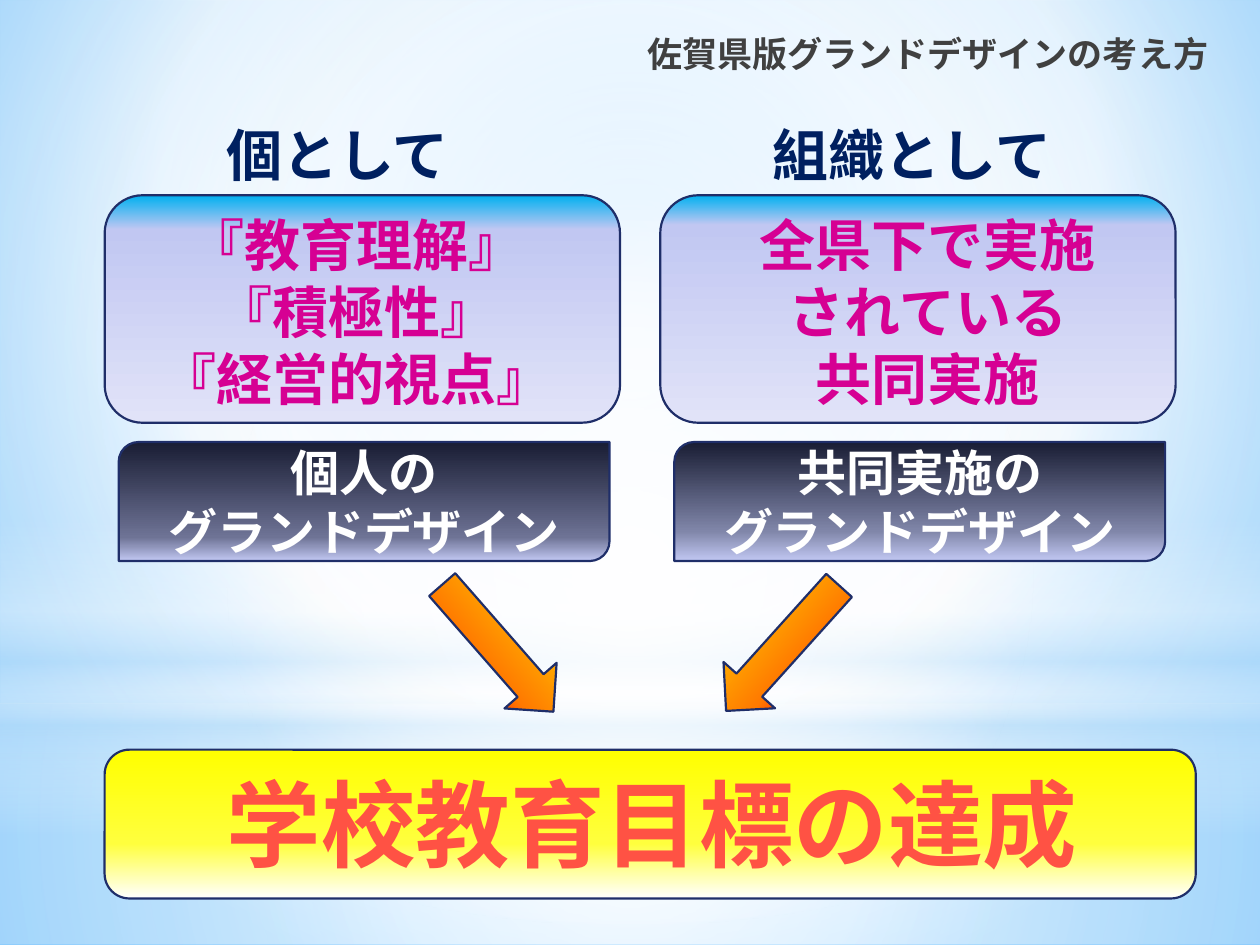
from lxml import etree
from pptx import Presentation
from pptx.dml.color import RGBColor
from pptx.enum.shapes import MSO_SHAPE
from pptx.enum.text import MSO_ANCHOR, PP_ALIGN
from pptx.oxml.ns import qn
from pptx.util import Pt

RECT, OVAL = MSO_SHAPE.RECTANGLE, MSO_SHAPE.OVAL
ROUND, DIAG = MSO_SHAPE.ROUNDED_RECTANGLE, MSO_SHAPE.ROUND_2_DIAG_RECTANGLE
ARROW = MSO_SHAPE.RIGHT_ARROW
TOP, MID = MSO_ANCHOR.TOP, MSO_ANCHOR.MIDDLE
CENTER, RIGHT = PP_ALIGN.CENTER, PP_ALIGN.RIGHT
SANS, KARLA = "Noto Sans CJK JP", "Karla"
HEX = {
    "white": "FFFFFF", "mist": "B4DCFA", "sky": "9ED5FF", "blue": "5BB9FF",
    "cyan": "00B0F0", "lilac": "C1C7F2", "pale": "E1E3F8", "edge": "1F2E69",
    "night": "191D34", "slate": "6E7395", "steel": "8086A9", "navy": "002060",
    "pink": "D60093", "gray": "404040", "coral": "FF5244", "yellow": "FFFF00",
    "lemon": "FFFF3D", "sun": "FFF200", "orange": "FF7A00", "red": "FF0300",
    "brown": "4D0808",
}


def grade(fill, root, stops, angle=90, focus=None):
    """Fill with a gradient of (place, colour, opacity) stops."""
    fill.solid()
    solid = root.find(".//" + qn("a:solidFill"))
    grad = etree.Element(qn("a:gradFill"), rotWithShape="1")
    marks = etree.SubElement(grad, qn("a:gsLst"))
    for place, name, *alpha in stops:
        mark = etree.SubElement(marks, qn("a:gs"), pos=str(place * 1000))
        tint = etree.SubElement(mark, qn("a:srgbClr"), val=HEX[name])
        if alpha:
            etree.SubElement(tint, qn("a:alpha"), val=str(alpha[0] * 1000))
    if focus:
        path = etree.SubElement(grad, qn("a:path"), path="circle")
        sides = {k: str(v * 1000) for k, v in zip("ltrb", focus)}
        etree.SubElement(path, qn("a:fillToRect"), **sides)
    else:
        etree.SubElement(grad, qn("a:lin"), ang=str(angle * 60000), scaled="0")
    solid.getparent().replace(solid, grad)


def block(slide, kind, box, stops, line=True, **look):
    """Add a gradient shape, outlined unless line is False."""
    shape = slide.shapes.add_shape(kind, *map(Pt, box))
    shape.shadow.inherit = False
    if line:
        shape.line.color.rgb = RGBColor.from_string(HEX["edge"])
        shape.line.width = Pt(1.25)
    else:
        shape.line.fill.background()
    props = shape.element.spPr
    rim = props.find(qn("a:ln"))
    props.remove(rim)
    grade(shape.fill, props, stops, **look)
    props.find(qn("a:gradFill")).addnext(rim)
    return shape


def write(shape, text, size=32, font=SANS, color="pink", align=CENTER,
          anchor=TOP, wrap=True):
    """Write one bold paragraph for each line of text."""
    frame = shape.text_frame
    frame.text = text
    frame.word_wrap = wrap
    frame.vertical_anchor = anchor
    for para in frame.paragraphs:
        para.alignment = align
        para.space_before = Pt(0)
        face = para.runs[0].font
        face.size, face.name, face.bold = Pt(size), font, True
        face.color.rgb = RGBColor.from_string(HEX[color])


def label(slide, box, text, **style):
    """Add a text box."""
    write(slide.shapes.add_textbox(*map(Pt, box)), text, **style)


def scene(slide, wide, high):
    """Paint the sky behind the content."""
    back = slide.background.fill
    back.solid()
    grade(back, slide.element, [(0, "sky"), (60, "white"), (100, "blue")],
          focus=(20, 10, 20, 60))
    split, mid = 402, (50, 50, 50, 50)
    block(slide, RECT, (0, split, wide, high - split),
          [(0, "white", 91), (37, "white", 76), (100, "mist", 79)],
          line=False, focus=mid)
    block(slide, RECT, (0, 0, wide, split),
          [(0, "white", 89), (48, "white", 62), (100, "mist", 79)],
          line=False, focus=mid)
    block(slide, RECT, (0, 297, wide, 180),
          [(0, "white", 0), (29, "white", 30), (45, "mist", 40),
           (55, "white", 26), (65, "mist", 60), (100, "white", 0)], line=False)
    block(slide, OVAL, (0, 126, wide, split),
          [(0, "white", 100), (56, "white", 0)], line=False, focus=mid)


def head(slide, box):
    """Place the title in front of the scene."""
    title = slide.shapes.title
    title.left, title.top, title.width, title.height = map(Pt, box)
    write(title, "佐賀県版グランドデザインの考え方", size=20, font=KARLA,
          color="gray", align=RIGHT)
    title.element.getparent().append(title.element)


def column(slide, box, name, points, plan, lead, body, stop, shade):
    """Build one column: heading, card and plan plate."""
    left, top, wide, high = box
    block(slide, ROUND, (left, top + 46, wide, 130),
          [(0, "cyan"), (stop, "lilac"), (100, "pale")])
    label(slide, (left + lead[0], top, lead[1], 46), name, color="navy")
    label(slide, (left + body[0], top + 51, body[1], 124), points)
    plate = block(slide, DIAG, (left + 8, top + high - 68, wide - 14, 68),
                  [(0, "night"), shade, (100, "lilac"), (100, "pale")])
    write(plate, plan, size=28, font=KARLA, color="white", anchor=MID)


def arrow(slide, box, turn, angle):
    """Add an arrow that points to the goal."""
    shape = block(slide, ARROW, box,
                  [(0, "sun"), (58, "orange"), (79, "red"), (100, "brown")],
                  angle=angle)
    shape.rotation = turn


def goal(slide, box):
    """Build the goal banner."""
    left, top, wide, high = box
    block(slide, ROUND, box,
          [(0, "yellow"), (63, "lemon"), (100, "white"), (100, "lilac"),
           (100, "pale")])
    label(slide, (left + 59, top + 6, 507.6, 73), "学校教育目標の達成",
          size=54, font=KARLA, color="coral", wrap=False)


def main():
    """Build and save the slide."""
    deck = Presentation()
    deck.slide_width, deck.slide_height = Pt(720), Pt(540)
    slide = deck.slides.add_slide(deck.slide_layouts[5])
    scene(slide, 720, 540)
    head(slide, (0, 15, 697.7, 45.4))
    column(slide, (59.8, 65.6, 294.5, 255), "個として",
           "『教育理解』\n『積極性』\n『経営的視点』", "個人の\nグランドデザイン",
           (45.3, 175.7), (22.3, 243.4), 15, (80, "slate"))
    column(slide, (377.3, 65.6, 294.5, 255), "組織として",
           "全県下で実施\nされている\n共同実施", "共同実施の\nグランドデザイン",
           (50.4, 187.2), (28.1, 249.8), 13, (75, "steel"))
    arrow(slide, (236.2, 350.6, 96.5, 39.6), 48.8, 90)
    arrow(slide, (398.9, 350.6, 96.5, 39.6), 132, 270)
    goal(slide, (59.8, 428.4, 623.5, 85))
    deck.save("out.pptx")


if __name__ == "__main__":
    main()
